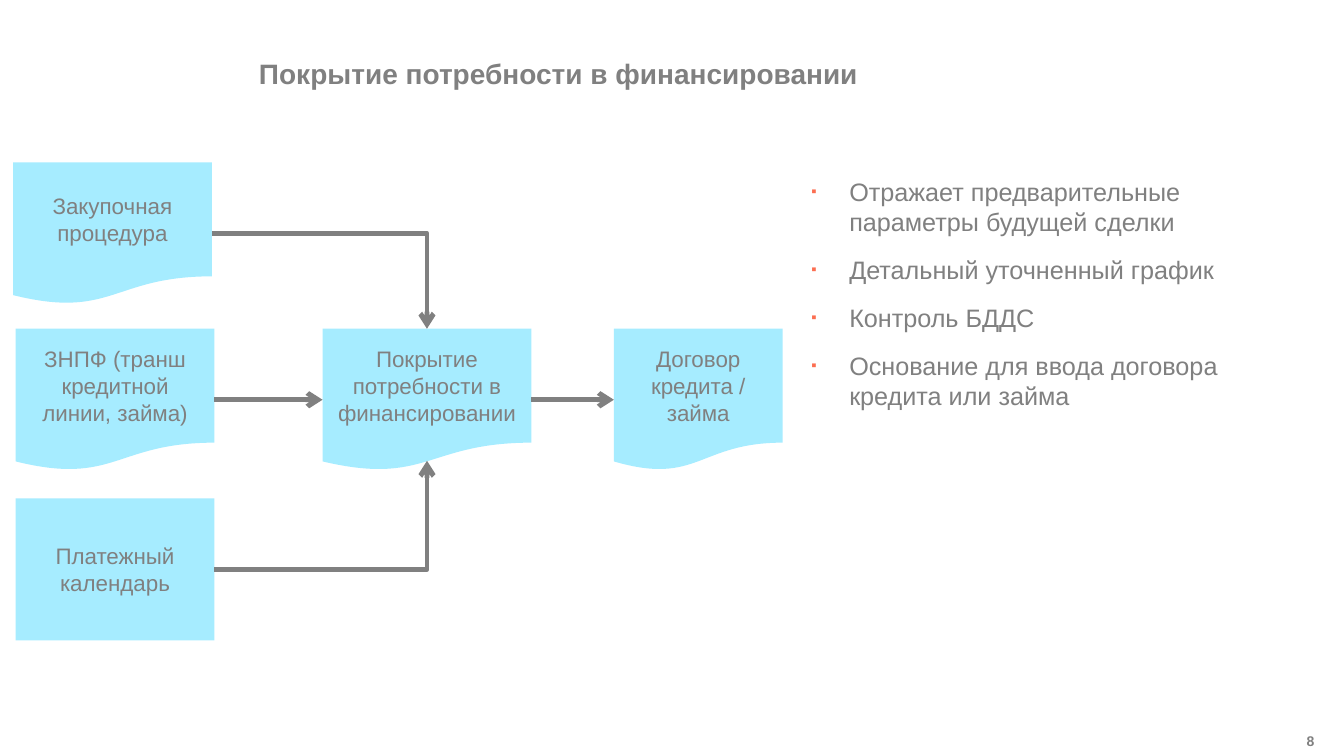
from dataclasses import dataclass

import lxml.etree
import pptx
import pptx.dml.color
import pptx.enum.shapes
import pptx.enum.text
import pptx.oxml
import pptx.oxml.ns
import pptx.shapes.autoshape
import pptx.shapes.connector
import pptx.slide
import pptx.text.text
import pptx.util

Pt = pptx.util.Pt
RGBColor = pptx.dml.color.RGBColor
Shape = pptx.enum.shapes.MSO_SHAPE
Connector = pptx.enum.shapes.MSO_CONNECTOR
Align = pptx.enum.text.PP_ALIGN
Anchor = pptx.enum.text.MSO_ANCHOR
qn = pptx.oxml.ns.qn

GRAY = RGBColor(0x80, 0x80, 0x80)
CYAN = RGBColor(0xA6, 0xEC, 0xFF)
CORAL = RGBColor(0xFC, 0x6E, 0x51)
FONT = "Arial"

BOX_H = 101.5
ROW_1, ROW_2, ROW_3 = 116, 234.8, 356
TOP, LEFT, BOTTOM, RIGHT = range(4)

BULLETS = [
    "Отражает предварительные параметры будущей сделки",
    "Детальный уточненный график",
    "Контроль БДДС",
    "Основание для ввода договора кредита или займа",
]


@dataclass
class Box:
    key: str
    text: str
    left: float
    top: float
    width: float
    kind: Shape = Shape.FLOWCHART_DOCUMENT


@dataclass
class Arrow:
    start: str
    end: str
    end_side: int = LEFT
    end_y: float | None = None


BOXES = [
    Box("coverage", "Покрытие потребности в финансировании", 230.4, ROW_2, 149.2),
    Box("contract", "Договор кредита / займа", 438.5, ROW_2, 120.5),
    Box("purchase", "Закупочная процедура", 9.3, ROW_1, 142),
    Box("request", "ЗНПФ (транш кредитной линии, займа)", 11.2, ROW_2, 142),
    Box("calendar", "Платежный календарь", 11.2, ROW_3, 142, Shape.RECTANGLE),
]

ARROWS = [
    Arrow("coverage", "contract"),
    Arrow("purchase", "coverage", TOP),
    Arrow("request", "coverage"),
    # The wavy lower edge lies above the bottom of the box frame.
    Arrow("calendar", "coverage", BOTTOM, end_y=329.2),
]


def place(sp: pptx.shapes.autoshape.Shape, left: float, top: float,
          width: float, height: float) -> None:
    sp.left, sp.top, sp.width, sp.height = Pt(left), Pt(top), Pt(width), Pt(height)


def format_text(tf: pptx.text.text.TextFrame, size: float, align: Align,
                anchor: Anchor, bold: bool = False) -> None:
    tf.word_wrap = True
    tf.auto_size = pptx.enum.text.MSO_AUTO_SIZE.NONE
    tf.vertical_anchor = anchor
    for p in tf.paragraphs:
        p.alignment = align
        for r in p.runs:
            r.font.name, r.font.size, r.font.bold = FONT, Pt(size), bold
            r.font.color.rgb = GRAY


def add_box(s: pptx.slide.Slide, box: Box) -> pptx.shapes.autoshape.Shape:
    sp = s.shapes.add_shape(box.kind, Pt(box.left), Pt(box.top), Pt(box.width), Pt(BOX_H))
    sp.shadow.inherit = False
    sp.fill.solid()
    sp.fill.fore_color.rgb = CYAN
    sp.line.fill.background()
    sp.text_frame.text = box.text
    format_text(sp.text_frame, 16, Align.CENTER, Anchor.MIDDLE)
    return sp


def add_arrow(s: pptx.slide.Slide, arrow: Arrow,
              shapes: dict[str, pptx.shapes.autoshape.Shape]) -> None:
    bent = arrow.end_side != LEFT
    kind = Connector.ELBOW if bent else Connector.STRAIGHT
    c: pptx.shapes.connector.Connector = s.shapes.add_connector(kind, 0, 0, 0, 0)
    c.begin_connect(shapes[arrow.start], RIGHT)
    c.end_connect(shapes[arrow.end], arrow.end_side)
    if arrow.end_y is not None:
        c.end_y = Pt(arrow.end_y)
    c.line.color.rgb = GRAY
    c.line.width = Pt(3.5)
    props = c._element.spPr
    if bent:
        props.find(qn("a:prstGeom")).set("prst", "bentConnector2")
    lxml.etree.SubElement(props.find(qn("a:ln")), qn("a:tailEnd"), type="arrow")
    lxml.etree.SubElement(props, qn("a:effectLst"))


def add_bullet(p: pptx.text.text._Paragraph) -> None:
    props = p._p.get_or_add_pPr()
    props.set("marL", str(Pt(27)))
    props.set("indent", str(-Pt(27)))
    color = lxml.etree.SubElement(props, qn("a:buClr"))
    lxml.etree.SubElement(color, qn("a:srgbClr"), val=str(CORAL))
    lxml.etree.SubElement(props, qn("a:buSzPct"), val="60000")
    lxml.etree.SubElement(props, qn("a:buFont"), typeface=FONT)
    lxml.etree.SubElement(props, qn("a:buChar"), char="▪")


def fill_title(sp: pptx.shapes.autoshape.Shape) -> None:
    place(sp, 177.8, 12.2, 506.2, 85)
    sp.text_frame.text = "Покрытие потребности в финансировании"
    sp.text_frame.paragraphs[0].line_spacing = 0.8
    format_text(sp.text_frame, 20, Align.LEFT, Anchor.MIDDLE, bold=True)


def fill_body(sp: pptx.shapes.autoshape.Shape) -> None:
    place(sp, 572.4, 122.4, 373.7, 368.6)
    tf = sp.text_frame
    tf.text = "\n".join(BULLETS)
    for i, p in enumerate(tf.paragraphs):
        add_bullet(p)
        p.space_before = Pt(3.6 if i else 0)
        p.space_after = Pt(9)
    format_text(tf, 18, Align.LEFT, Anchor.TOP)


def add_page_number(s: pptx.slide.Slide) -> None:
    sp = s.shapes.add_textbox(Pt(865.4), Pt(519.8), Pt(80.6), Pt(20.2))
    sp.text_frame.text = "8"
    format_text(sp.text_frame, 10, Align.RIGHT, Anchor.TOP, bold=True)


def main() -> None:
    prs = pptx.Presentation()
    prs.slide_width, prs.slide_height = Pt(960), Pt(540)
    s = prs.slides.add_slide(prs.slide_layouts[1])
    fill_title(s.shapes.title)
    fill_body(s.placeholders[1])
    add_page_number(s)
    shapes = {box.key: add_box(s, box) for box in BOXES}
    for arrow in ARROWS:
        add_arrow(s, arrow, shapes)
    prs.save("out.pptx")


if __name__ == "__main__":
    main()
